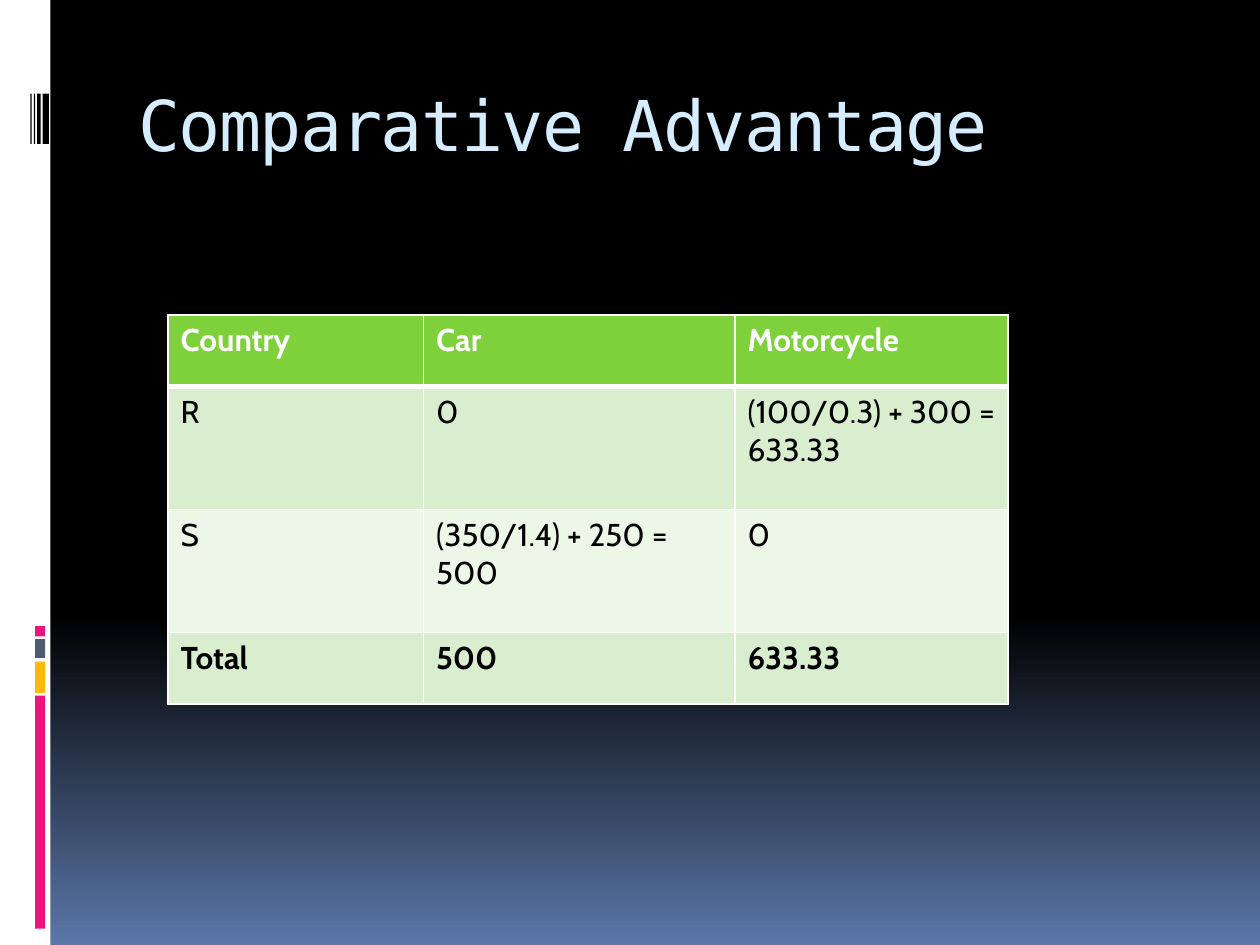
"""Build the Comparative Advantage slide with its sidebar and table."""
from lxml import etree
from pptx import Presentation
from pptx.dml.color import RGBColor
from pptx.enum.shapes import MSO_SHAPE
from pptx.enum.text import MSO_ANCHOR, PP_ALIGN
from pptx.oxml.ns import qn
from pptx.util import Pt

RECT = MSO_SHAPE.RECTANGLE
TOP = MSO_ANCHOR.TOP
LEFT = PP_ALIGN.LEFT
TITLE_ONLY = 5

COLORS = {
    "black": "000000", "white": "FFFFFF", "blue": "5B77A8", "title": "D6ECFF",
    "pink": "EA157A", "yellow": "FEB80A", "slate": "4E5B6F",
    "header": "7FD13B", "band": "D8EECE", "pale": "ECF7E8",
}
BLOCKS = [("pink", 397.5, 133.2), ("yellow", 378, 18),
          ("slate", 365.2, 10.8), ("pink", 357.8, 5.8)]
BARS = [(24.4, 3.6), (21.2, 2.1), (19.4, 0.8), (17.4, 0.7)]
COLUMNS = [146, 178, 156]
ROWS = [
    (41, "header", "white", True, ["Country", "Car", "Motorcycle"]),
    (70.2, "band", "black", False, ["R", "0", "(100/0.3) + 300 = 633.33"]),
    (70.2, "pale", "black", False, ["S", "(350/1.4) + 250 = 500", "0"]),
    (41, "band", "black", True, ["Total", "500", "633.33"]),
]


def rgb(name):
    """Return the named colour."""
    return RGBColor.from_string(COLORS[name])


def format_run(r, color, **values):
    """Set the font colour and values of a run."""
    r.font.color.rgb = rgb(color)
    for key, value in values.items():
        setattr(r.font, key, value)


def set_background(slide):
    """Fade the slide from black to blue at the bottom."""
    fill = slide.background.fill
    fill.gradient()
    fill.gradient_angle = 270
    for stop, color, position in zip(fill.gradient_stops, ("black", "blue"), (0.65, 1)):
        stop.color.rgb = rgb(color)
        stop.position = position


def add_rect(slide, color, *box):
    """Add a plain filled rectangle."""
    sp = slide.shapes.add_shape(RECT, *map(Pt, box))
    sp.shadow.inherit = False
    sp.fill.solid()
    sp.fill.fore_color.rgb = rgb(color)
    sp.line.fill.background()


def add_sidebar(slide):
    """Add the white strip with its blocks and bars."""
    add_rect(slide, "white", 0, 0, 28.8, 540)
    for color, top, height in BLOCKS:
        add_rect(slide, color, 20, top, 5.8, height)
    for left, width in BARS:
        add_rect(slide, "black", left, 53.5, width, 28.8)


def set_title(slide, text):
    """Place and format the title."""
    sp = slide.shapes.title
    box = {"left": 72, "top": 40.3, "width": 612, "height": 72}
    for key, value in box.items():
        setattr(sp, key, Pt(value))
    tf = sp.text_frame
    tf.vertical_anchor = TOP
    tf.margin_top = Pt(6)
    p = tf.paragraphs[0]
    p.alignment = LEFT
    r = p.add_run()
    r.text = text
    format_run(r, "title", name="DejaVu Sans Mono", size=Pt(40))
    r.font._element.set("spc", "-100")


def set_borders(cell, bottom):
    """Draw white borders, with the bottom one in its own width."""
    tc_pr = cell._tc.get_or_add_tcPr()
    widths = {"a:lnL": 1, "a:lnR": 1, "a:lnT": 1, "a:lnB": bottom}
    for index, (tag, width) in enumerate(widths.items()):
        ln = etree.Element(qn(tag), w=str(Pt(width)))
        fill = etree.SubElement(ln, qn("a:solidFill"))
        etree.SubElement(fill, qn("a:srgbClr"), val=COLORS["white"])
        tc_pr.insert(index, ln)


def add_table(slide):
    """Add the table of countries and outputs."""
    height = sum(row[0] for row in ROWS)
    table = slide.shapes.add_table(
        len(ROWS), len(COLUMNS), Pt(96), Pt(180), Pt(sum(COLUMNS)), Pt(height)).table
    for column, width in zip(table.columns, COLUMNS):
        column.width = Pt(width)
    for i, (row, (height, fill, color, bold, texts)) in enumerate(zip(table.rows, ROWS)):
        row.height = Pt(height)
        for cell, text in zip(row.cells, texts):
            cell.fill.solid()
            cell.fill.fore_color.rgb = rgb(fill)
            r = cell.text_frame.paragraphs[0].add_run()
            r.text = text
            format_run(r, color, name="Cabin", size=Pt(18), bold=bold)
            set_borders(cell, 1 if i else 3)
            if i == 1:
                cell._tc.tcPr.find(qn("a:lnT")).set("w", str(Pt(3)))


def main():
    """Build and save the slide."""
    prs = Presentation()
    prs.slide_width, prs.slide_height = Pt(720), Pt(540)
    slide = prs.slides.add_slide(prs.slide_layouts[TITLE_ONLY])
    set_background(slide)
    add_sidebar(slide)
    set_title(slide, "Comparative Advantage")
    add_table(slide)
    prs.save("out.pptx")


if __name__ == "__main__":
    main()
